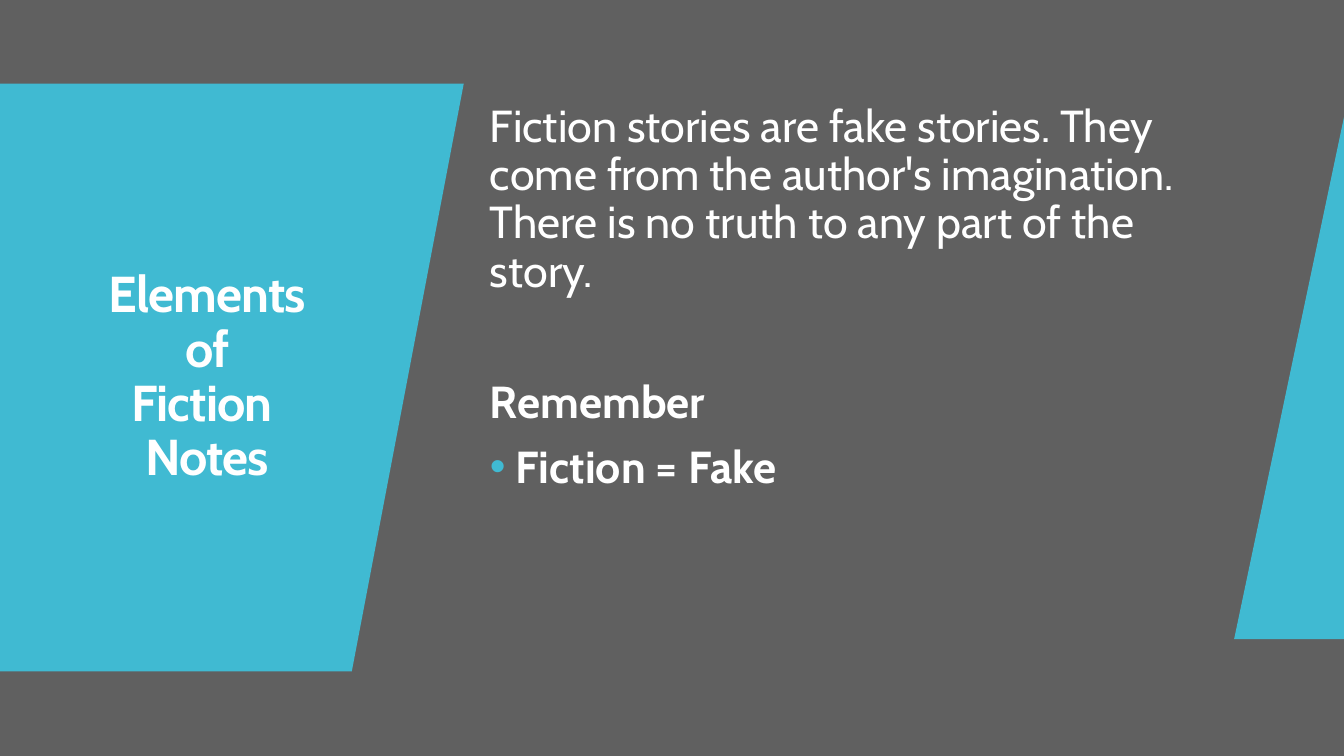
import pptx
import pptx.dml.color
import pptx.enum.text
import pptx.oxml.ns
import pptx.util
from lxml import etree

Inches = pptx.util.Inches
Pt = pptx.util.Pt
qn = pptx.oxml.ns.qn
ALIGN = pptx.enum.text.PP_ALIGN
COLORS = {"background": "606060", "accent": "40BAD2", "text": "FFFFFF"}


def rgb(name):
    """Return the named colour."""
    return pptx.dml.color.RGBColor.from_string(COLORS[name])


def add_panel(s, points):
    """Draw a flat accent polygon, in inches, behind the text."""
    fb = s.shapes.build_freeform(*[Inches(v) for v in points[0]], scale=1.0)
    fb.add_line_segments([(Inches(x), Inches(y)) for x, y in points[1:]], close=True)
    sp = fb.convert_to_shape()
    sp.shadow.inherit = False
    sp.fill.solid()
    sp.fill.fore_color.rgb = rgb("accent")
    sp.line.fill.background()
    s.shapes.title.element.addprevious(sp.element)


def place(sp, x, y, w, h):
    """Move a placeholder to its box and return its prepared text frame."""
    sp.left, sp.top, sp.width, sp.height = [Inches(v) for v in (x, y, w, h)]
    tf = sp.text_frame
    tf.word_wrap = True
    tf.auto_size = pptx.enum.text.MSO_AUTO_SIZE.NONE
    tf.vertical_anchor = pptx.enum.text.MSO_ANCHOR.MIDDLE
    return tf


def format_paragraph(p, size, align, before=0, bold=False):
    """Apply spacing, alignment and font to a paragraph."""
    p.alignment = align
    p.line_spacing = 0.9
    p.space_before = Pt(before)
    p.font.name = "Cabin"
    p.font.size = Pt(size)
    p.font.bold = bold
    p.font.color.rgb = rgb("text")


def add_bullet(p):
    """Give a paragraph an accent bullet with a hanging indent."""
    pPr = p._p.get_or_add_pPr()
    pPr.set("marL", "0")
    pPr.set("indent", str(-Inches(0.2)))
    defRPr = pPr.find(qn("a:defRPr"))
    buClr = etree.Element(qn("a:buClr"))
    etree.SubElement(buClr, qn("a:srgbClr"), val=COLORS["accent"])
    defRPr.addprevious(buClr)
    defRPr.addprevious(etree.Element(qn("a:buFont"), typeface="Arial"))
    defRPr.addprevious(etree.Element(qn("a:buChar"), char="•"))


def add_title(s, x, y, w, h):
    """Fill the left panel and its title."""
    add_panel(s, [(x, y), (x + w, y), (x + w - 1.11, y + h), (x, y + h)])
    p = place(s.shapes.title, x + 0.54, y + 1.01, 3.03, 3.82).paragraphs[0]
    p.text = "Elements\vof\vFiction \vNotes"
    format_paragraph(p, 36, ALIGN.CENTER, bold=True)
    p._p.pPr.find(qn("a:defRPr")).set("spc", "-60")


def add_notes(s, x, y, w, h):
    """Fill the body with the definition and the reminder."""
    tf = place(s.placeholders[1], x, y, w, h)
    notes = [
        ("Fiction stories are fake stories. They come from the author's imagination. "
         "There is no truth to any part of the story.", 12, False),
        ("Remember", 59, True),
        ("\N{NO-BREAK SPACE}Fiction = Fake", 12, True),
    ]
    for i, (text, before, bold) in enumerate(notes):
        p = tf.paragraphs[0] if i == 0 else tf.add_paragraph()
        p.text = text
        format_paragraph(p, 32, ALIGN.LEFT, before, bold)
    add_bullet(p)


def add_edge(s, x, y, w, h):
    """Draw the triangle at the right edge."""
    add_panel(s, [(x + w, y + h), (x, y + h), (x + w, y)])


def main():
    """Build and save the slide."""
    prs = pptx.Presentation()
    prs.slide_width, prs.slide_height = Inches(13.33), Inches(7.5)
    s = prs.slides.add_slide(prs.slide_layouts[0])
    s.background.fill.solid()
    s.background.fill.fore_color.rgb = rgb("background")
    add_title(s, 0, 0.83, 4.6, 5.83)
    add_notes(s, 4.76, 0.26, 7.25, 5.4)
    add_edge(s, 12.24, 1.16, 1.09, 5.18)
    prs.save("out.pptx")


if __name__ == "__main__":
    main()
